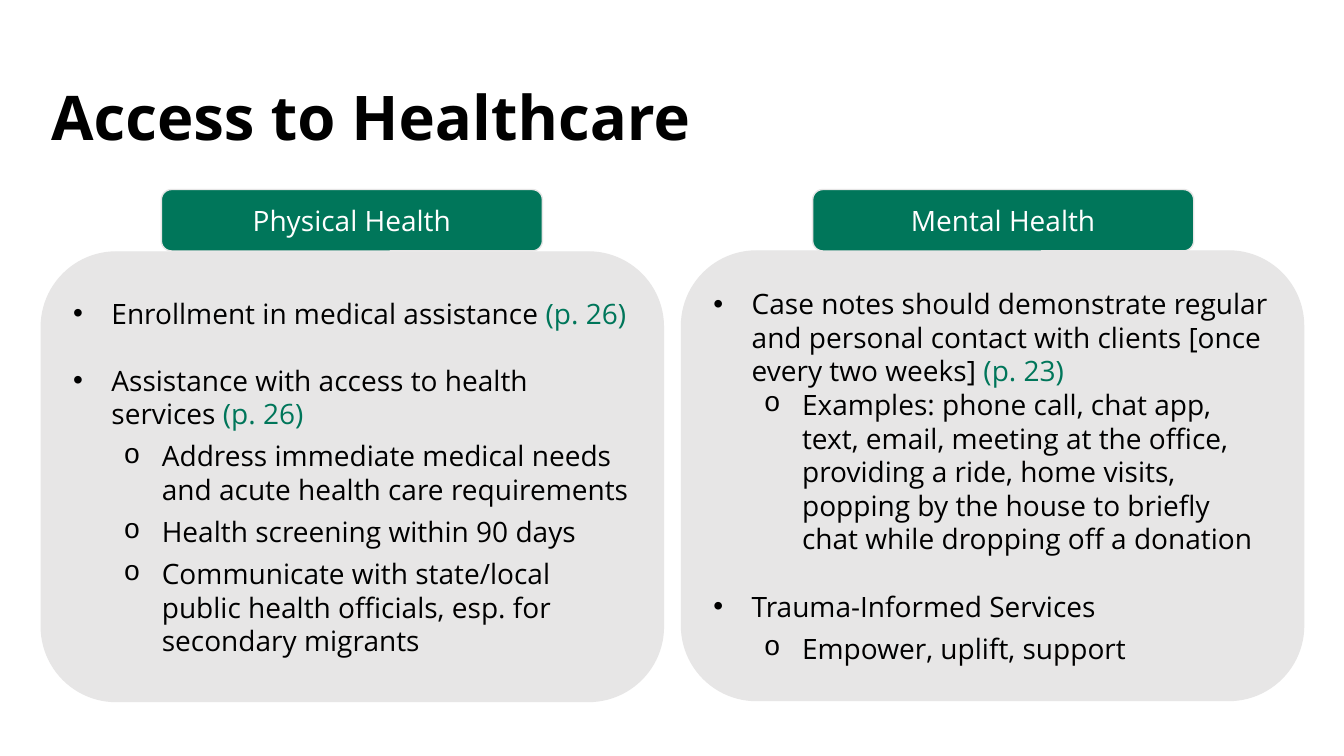
import pptx
import pptx.util
import pptx.dml.color
import pptx.enum.shapes
import pptx.enum.text
from lxml import etree

Inches, Pt = pptx.util.Inches, pptx.util.Pt
GREEN, GRAY, BLACK, WHITE = "00765A", "E7E6E6", "000000", "FFFFFF"
BULLETS = ["•", "o"]

# Each item: level, text, page reference, space after in points
COLUMNS = [
    ("Physical Health", 0.41, 2.5, 1.6, [
        (0, "Enrollment in medical assistance ", "(p. 26)", 24),
        (0, "Assistance with access to health services ", "(p. 26)", 6),
        (1, "Address immediate medical needs and acute health care requirements", "", 6),
        (1, "Health screening within 90 days", "", 6),
        (1, "Communicate with state/local public health officials, esp. for "
            "secondary migrants", "", 6),
    ]),
    ("Mental Health", 6.76, 2.49, 8.06, [
        (0, "Case notes should demonstrate regular and personal contact with "
            "clients [once every two weeks] ", "(p. 23)", 0),
        (1, "Examples: phone call, chat app, text, email, meeting at the office, "
            "providing a ride, home visits, popping by the house to briefly chat "
            "while dropping off a donation", "", 24),
        (0, "Trauma-Informed Services", "", 6),
        (1, "Empower, uplift, support", "", 6),
    ]),
]


def add_span(para, text, color, size=20, bold=False):
    span = para.add_run()
    span.text = text
    span.font.name = "Open Sans"
    span.font.size = Pt(size)
    span.font.bold = bold
    span.font.color.rgb = pptx.dml.color.RGBColor.from_string(color)


def add_panel(left, top, width, height, fill):
    """Add a rounded box with a thin gray outline and return its text frame."""
    box = page.shapes.add_shape(
        pptx.enum.shapes.MSO_SHAPE.ROUNDED_RECTANGLE,
        Inches(left), Inches(top), Inches(width), Inches(height))
    box.shadow.inherit = False
    box.fill.solid()
    box.fill.fore_color.rgb = pptx.dml.color.RGBColor.from_string(fill)
    box.line.color.rgb = pptx.dml.color.RGBColor.from_string(GRAY)
    box.line.width = Pt(1)
    box.text_frame.word_wrap = True
    box.text_frame.vertical_anchor = pptx.enum.text.MSO_ANCHOR.MIDDLE
    return box.text_frame


deck = pptx.Presentation()
deck.slide_width, deck.slide_height = Inches(13.33), Inches(7.5)
page = deck.slides.add_slide(deck.slide_layouts[6])

title = page.shapes.add_textbox(Inches(0.41), Inches(0.73), Inches(7.69), Inches(0.84))
title.text_frame.word_wrap = True
add_span(title.text_frame.paragraphs[0], "Access to Healthcare", BLACK, 44, True)

for heading, panel_left, panel_top, heading_left, items in COLUMNS:
    frame = add_panel(panel_left, panel_top, 6.17, 4.46, GRAY)
    for index, (level, text, reference, space_after) in enumerate(items):
        para = frame.add_paragraph() if index else frame.paragraphs[0]
        para.alignment = pptx.enum.text.PP_ALIGN.LEFT
        para.level = level
        para.space_after = Pt(space_after)
        add_span(para, text, BLACK)
        if reference:
            add_span(para, reference, GREEN)
        properties = para._p.get_or_add_pPr()
        properties.set("marL", str(Inches(0.38 + 0.5 * level)))
        properties.set("indent", str(Inches(-0.38)))
        namespace = properties.nsmap["a"]
        font = etree.SubElement(properties, f"{{{namespace}}}buFont")
        font.set("typeface", ["Arial", "Courier New"][level])
        bullet = etree.SubElement(properties, f"{{{namespace}}}buChar")
        bullet.set("char", BULLETS[level])

    frame = add_panel(heading_left, 1.88, 3.78, 0.61, GREEN)
    frame.paragraphs[0].alignment = pptx.enum.text.PP_ALIGN.CENTER
    add_span(frame.paragraphs[0], heading, WHITE)

deck.save("out.pptx")
